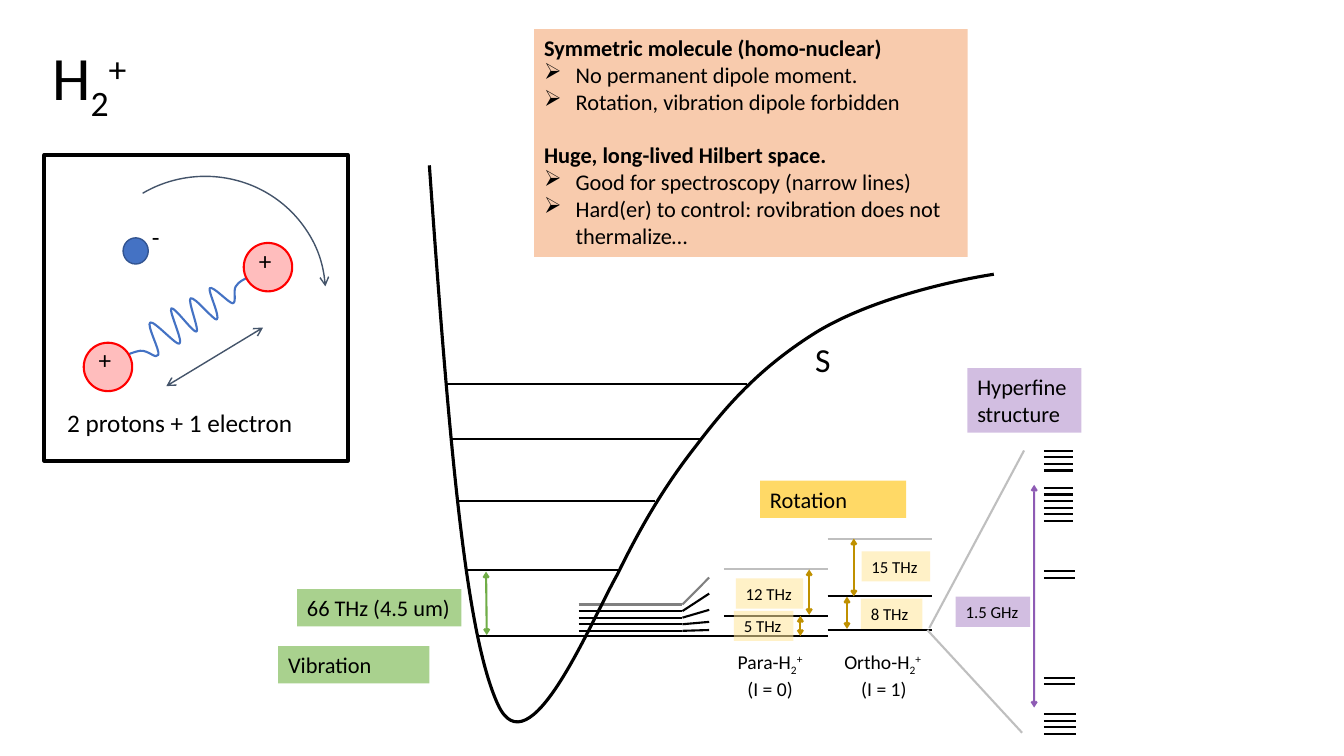
from dataclasses import dataclass
from pptx import Presentation
from pptx.dml.color import RGBColor as RGB
from pptx.enum.shapes import MSO_CONNECTOR as CONN, MSO_SHAPE as SHAPE
from pptx.enum.text import MSO_ANCHOR as ANCHOR, MSO_AUTO_SIZE as FIT, PP_ALIGN as ALIGN
from pptx.oxml.ns import qn
from pptx.util import Pt
from lxml.etree import SubElement


@dataclass(frozen=True)
class Theme:
    font: str = "Calibri"
    black: str = "000000"
    gray: str = "808080"
    pale: str = "BFBFBF"
    slate: str = "44546A"
    blue: str = "4472C4"
    blue_edge: str = "325491"
    red: str = "FF0000"
    pink: str = "FFBDBD"
    peach: str = "F8CBAD"
    green: str = "A9D18E"
    green_line: str = "70AD47"
    gold: str = "FFD966"
    gold_line: str = "BF9000"
    cream: str = "FFE699"
    purple: str = "7030A0"
    title: int = 44
    symbol: int = 24
    caption: int = 18
    body: int = 16
    small: int = 14
    tiny: int = 12


T = Theme()
SUB, SUP = -25000, 30000


# Shared helpers: every position is in points, relative to box
def set_line(ln, color, width, alpha=None):
    ln.color.rgb, ln.width = RGB.from_string(color), Pt(width)
    if alpha:
        set_alpha(ln.fill._xPr, alpha)


def set_alpha(el, percent):
    clr = next(el.iter(qn("a:srgbClr")))
    SubElement(clr, qn("a:alpha"), val=str(percent * 1000))


def write(p, parts, size, bold=False):
    """Parts are strings or (string, baseline) pairs."""
    for part in parts:
        text, base = part if isinstance(part, tuple) else (part, 0)
        r = p.add_run()
        r.text = text
        for key, val in dict(name=T.font, size=Pt(size), bold=bold).items():
            setattr(r.font, key, val)
        r.font.color.rgb = RGB.from_string(T.black)
        if base:
            r._r.get_or_add_rPr().set("baseline", str(base))


def add_text(s, box, rect, paras, size, fill=None, alpha=None, wrap=True, **fmt):
    x, y, w, h = rect
    sp = s.shapes.add_textbox(Pt(box[0] + x), Pt(box[1] + y), Pt(w), Pt(h))
    if fill:
        sp.fill.solid()
        sp.fill.fore_color.rgb = RGB.from_string(fill)
    if alpha:
        set_alpha(sp._element.spPr, alpha)
    tf = sp.text_frame
    tf.word_wrap, tf.auto_size = wrap, FIT.SHAPE_TO_FIT_TEXT
    for i, parts in enumerate(paras):
        p = tf.add_paragraph() if i else tf.paragraphs[0]
        for key, val in fmt.items():
            setattr(p, key, val)
        write(p, parts, size)
    return tf


def add_preset(s, box, kind, rect, color, width, fill=None):
    x, y, w, h = rect
    sp = s.shapes.add_shape(kind, Pt(box[0] + x), Pt(box[1] + y), Pt(w), Pt(h))
    sp.shadow.inherit = False
    set_line(sp.line, color, width)
    if fill:
        sp.fill.solid()
        sp.fill.fore_color.rgb = RGB.from_string(fill)
    else:
        sp.fill.background()
    return sp


def add_heads(sp, ends, size):
    ln = sp.line._get_or_add_ln()
    for end in ends:
        SubElement(ln, qn(f"a:{end}"), type="arrow", w=size, len=size)


def add_line(s, box, x1, y1, x2, y2, color=T.black, width=1.5, heads=None, alpha=None):
    x, y = box[:2]
    sp = s.shapes.add_connector(CONN.STRAIGHT, Pt(x + x1), Pt(y + y1), Pt(x + x2), Pt(y + y2))
    set_line(sp.line, color, width, alpha)
    if heads:
        add_heads(sp, ("headEnd", "tailEnd"), heads)
    SubElement(sp._element.spPr, qn("a:effectLst"))


def add_curve(s, box, knots, color, width, height):
    """Knots hold a start point, then three points per cubic segment."""
    pts = [(Pt(box[0] + x), Pt(box[1] + y)) for x, y in knots]
    ends = pts[::3]
    fb = s.shapes.build_freeform(*ends[0])
    fb.add_line_segments(ends[1:], close=False)
    sp = fb.convert_to_shape()
    sp.shadow.inherit = False
    sp.fill.background()
    set_line(sp.line, color, width)
    # Bend each straight segment into a cubic one
    outline = next(sp._element.iter(qn("a:path")))
    for i, seg in enumerate(outline.findall(qn("a:lnTo"))):
        cubic = SubElement(outline, qn("a:cubicBezTo"))
        for x, y in pts[3 * i + 1:3 * i + 4]:
            SubElement(cubic, qn("a:pt"), x=str(x - sp.left), y=str(y - sp.top))
        outline.remove(seg)
    sp.height = Pt(height)
    outline.set("h", str(Pt(height)))


# Title
def add_title(s, box):
    tf = add_text(s, box, (0, 0, *box[2:]), [["H", ("2", SUB), ("+", SUP)]], T.title, line_spacing=0.9)
    tf.vertical_anchor, tf.auto_size = ANCHOR.MIDDLE, FIT.NONE


# Key properties, each heading followed by its bullets
def add_properties(s, box):
    sections = {
        "Symmetric molecule (homo-nuclear)": [
            "No permanent dipole moment.", "Rotation, vibration dipole forbidden"],
        "Huge, long-lived Hilbert space.": [
            "Good for spectroscopy (narrow lines)",
            "Hard(er) to control: rovibration does not thermalize…"],
    }
    tf = add_text(s, box, (0, 0, *box[2:]), [], T.body, T.peach)
    for i, (heading, bullets) in enumerate(sections.items()):
        p = tf.add_paragraph() if i else tf.paragraphs[0]
        if i:
            p.space_before = Pt(19)
        write(p, [heading], T.body, True)
        for text in bullets:
            p = tf.add_paragraph()
            pPr = p._p.get_or_add_pPr()
            pPr.set("marL", str(Pt(22.5)))
            pPr.set("indent", str(-Pt(22.5)))
            SubElement(pPr, qn("a:buFont"), typeface="Wingdings", charset="2")
            SubElement(pPr, qn("a:buChar"), char="Ø")
            write(p, [text], T.body)


# Framed molecule sketch
def add_molecule(s, box):
    spring = [(48.2, 147.6), (55.4, 144), (63.4, 140.4), (68.4, 139.7),
              (74.2, 139), (79.9, 146.2), (81.4, 142.6), (82.8, 139.7), (72.7, 121), (75.6, 119.5),
              (78.5, 118.1), (94.3, 136.1), (96.5, 134.6), (99.4, 133.2), (88.6, 110.9), (90.7, 109.4),
              (92.9, 108), (106.6, 127.4), (108.7, 126), (110.9, 125.3), (102.2, 103.7), (104.4, 102.2),
              (107.3, 100.8), (121, 118.1), (123.1, 117.4), (126, 115.9), (116.6, 96.5), (118.1, 95),
              (120.2, 92.9), (131.8, 105.8), (134.6, 105.8), (137.5, 105.1), (134.6, 96.5), (136.8, 93.6),
              (139, 90), (142.6, 88.6), (146.2, 87.1)]
    add_curve(s, box, spring, T.blue, 1.5, 60.5)
    for x, y in ((28.1, 133.9), (142.4, 62.6)):
        add_preset(s, box, SHAPE.OVAL, (x, y, 34.6, 34.6), T.red, 1.5, T.pink)
    arc = add_preset(s, box, SHAPE.ARC, (28.1, 15.1, 172.8, 168.5), T.slate, 1)
    arc.rotation = 355
    arc.adjustments[0], arc.adjustments[1] = 146.08, 0.74
    add_heads(arc, ["tailEnd"], "med")
    add_line(s, box, 87.1, 164.9, 156.2, 123.1, T.slate, 1, "med")
    add_preset(s, box, SHAPE.OVAL, (56.2, 59, 18, 18.7), T.blue_edge, 1, T.blue)
    for text, x, y, w in (("+", 146.2, 60.9, 28.1), ("+", 31.7, 131.8, 28.1), ("-", 69.8, 43.9, 23.8),
                          ("2 protons + 1 electron", 9.2, 176.4, 209.5)):
        add_text(s, box, (x, y, w, 34.6), [[text]], T.caption, wrap=False)
    add_preset(s, box, SHAPE.RECTANGLE, (0, 0, *box[2:]), T.black, 3)


# Rotational levels of the ground vibrational state
def add_rotation(s, box):
    add_text(s, box, (133.9, 0, 104.4, 26.6), [["Rotation"]], T.body, T.gold)
    for i, y_end in enumerate((69.1, 80.6, 92.2, 100.8, 106.6)):
        y, color = 88.4 + 4.7 * i, T.black if i else T.gray
        add_line(s, box, 4.3, y, 78.5, y, color)
        add_line(s, box, 78.5, y, 97.6, y_end, color)
    for x1, x2, y, color in ((0, 182.2, 110.9, T.black), (108, 182.2, 96.5, T.black),
                             (108, 182.2, 63.2, T.pale), (182.2, 257, 106.6, T.black),
                             (182.2, 257, 82.6, T.black), (182.2, 257, 41.3, T.pale)):
        add_line(s, box, x1, y, x2, y, color)
    for x, y1, y2 in ((162.7, 110.9, 96.5), (196, 105.8, 82.8), (169, 95.8, 63.4), (200.9, 82.6, 41.3)):
        add_line(s, box, x, y1, x, y2, T.gold_line, heads="sm")
    for n, x, y, w in ((5, 115.2, 92.9, 42.5), (8, 205.9, 84.2, 43.9),
                       (12, 116.6, 69.8, 48.2), (15, 206.4, 50.4, 49)):
        add_text(s, box, (x, y, w, 21.6), [[f"{n} THz"]], T.tiny, T.cream, 55)
    for name, spin, sign, x, w in (("Para", 0, "+", 101.5, 79.2), ("Ortho", 1, "+ ", 177.1, 90.7)):
        add_text(s, box, (x, 117.4, w, 41), [[f"{name}-H", ("2", SUB), (sign, SUP)], [f"(I = {spin})"]],
                 T.small, alignment=ALIGN.CENTER)


# Hyperfine splitting, widened by two guide lines
def add_hyperfine(s, box):
    add_text(s, box, (28.6, 0.2, 81.4, 46.1), [["Hyperfine structure"]], T.body, T.purple, 31)
    for top, count, w in ((59.2, 4, 21), (85.7, 6, 21), (145.1, 2, 22.3), (221.4, 2, 22.3), (247.4, 4, 23)):
        for i in range(count):
            y = top + 4.7 * i
            add_line(s, box, 83.3, y, 83.3 + w, y)
    add_line(s, box, 1.4, 185.8, 69.1, 59, T.pale)
    add_line(s, box, 0, 187.2, 67.7, 260.6, T.pale)
    add_line(s, box, 76.3, 242.6, 76.3, 83.5, T.purple, heads="sm", alpha=78)
    add_text(s, box, (20.2, 163.4, 53.3, 21.6), [["1.5 GHz"]], T.tiny, T.purple, 31)


# Potential well with vibrational levels
def add_well(s, box):
    for x1, x2, y in ((142.6, 221, 336.2), (133.9, 242.6, 289), (128.9, 269.3, 239.8),
                      (123.8, 301.7, 195.4), (120.2, 334.8, 156.2)):
        add_line(s, box, x1, y, x2, y)
    add_line(s, box, 149, 335.5, 148.5, 290.2, T.green_line, heads="sm")
    for text, x, y, w in (("66 THz (4.5 um)", 13.5, 302.8, 117.4), ("Vibration", 0, 343.4, 108)):
        add_text(s, box, (x, y, w, 26.6), [[text]], T.body, T.green)
    add_text(s, box, (376.4, 120.2, 31, 36), [["S"]], T.symbol, wrap=False)
    well = [(108, 0), (123.1, 211.7), (134.6, 336.2), (157, 385.2), (179.3, 433.4), (222.5, 327.6),
            (241.9, 293), (258.5, 259.2), (275, 230.4), (298.1, 200.9), (320.4, 171.4), (343.4, 145.4),
            (381.6, 121), (419.8, 96.5), (479.5, 82.8), (511.2, 77.8)]
    add_curve(s, box, well, T.black, 2.25, box[3])


def main():
    prs = Presentation()
    prs.slide_width, prs.slide_height = Pt(960), Pt(540)
    s = prs.slides.add_slide(prs.slide_layouts[6])
    add_title(s, (30.2, 3.6, 828, 104.4))
    add_properties(s, (381.6, 20.9, 309.6, 162.7))
    add_molecule(s, (31.7, 110.9, 216.7, 218.2))
    add_rotation(s, (409, 343.4, 267.8, 158.4))
    add_hyperfine(s, (662.4, 262.8, 110.2, 263.5))
    add_well(s, (198.7, 118.1, 511.2, 397.4))
    prs.save("out.pptx")


if __name__ == "__main__":
    main()
